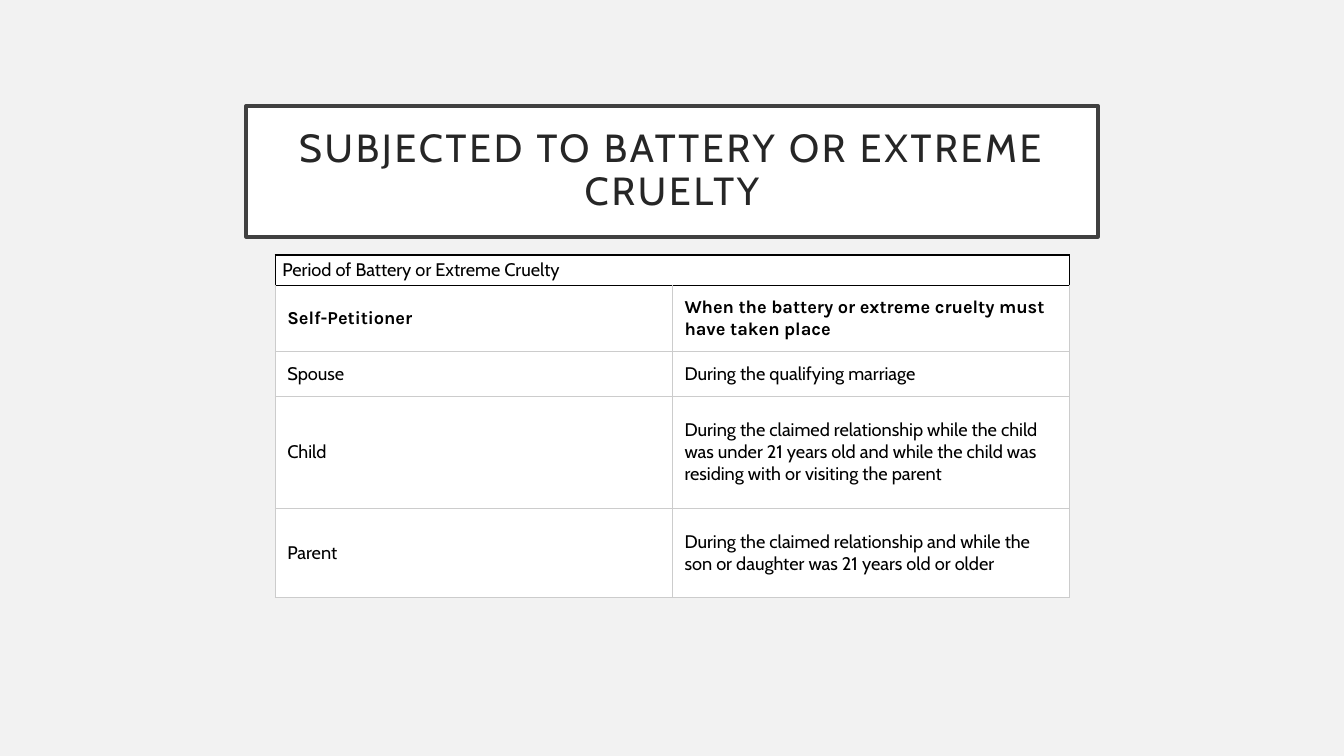
import pptx
import pptx.util
import pptx.dml.color
import pptx.enum.shapes
import pptx.enum.text
import pptx.oxml
import pptx.oxml.ns

RGB = pptx.dml.color.RGBColor
MID = pptx.enum.text.MSO_ANCHOR.MIDDLE
PAPER = RGB(0xF2, 0xF2, 0xF2)
WHITE = RGB(0xFF, 0xFF, 0xFF)
FRAME = RGB(0x40, 0x40, 0x40)
INK = RGB(0x26, 0x26, 0x26)
BLACK = RGB(0, 0, 0)
GRID = RGB(0xCC, 0xCC, 0xCC)

TITLE = "SUBJECTED TO BATTERY OR EXTREME CRUELTY"
ROWS = [
    (30, "Period of Battery or Extreme Cruelty", ""),
    (66, "Self-Petitioner",
     "When the battery or extreme cruelty must have taken place"),
    (44, "Spouse", "During the qualifying marriage"),
    (111, "Child",
     "During the claimed relationship while the child was under 21 years old "
     "and while the child was residing with or visiting the parent"),
    (89, "Parent",
     "During the claimed relationship and while the son or daughter was "
     "21 years old or older"),
]


def px(num):
    return pptx.util.Emu(num * 9144)


def inset(part, side, top):
    part.margin_left = part.margin_right = px(side)
    part.margin_top = part.margin_bottom = px(top)
    part.vertical_anchor = MID


def style(run, face, size, color, bold=False):
    run.font.name = face
    run.font.size = pptx.util.Pt(size)
    run.font.color.rgb = color
    run.font.bold = bold


def edge(cell, side, color, width):
    line = pptx.oxml.parse_xml(
        f'<a:ln{side} {pptx.oxml.ns.nsdecls("a")} w="{pptx.util.Pt(width)}">'
        f'<a:solidFill><a:srgbClr val="{color}"/></a:solidFill></a:ln{side}>')
    cell._tc.get_or_add_tcPr().append(line)


def banner(slide, left, top, width, height):
    box = slide.shapes.add_shape(
        pptx.enum.shapes.MSO_SHAPE.RECTANGLE,
        px(left), px(top), px(width), px(height))
    box.shadow.inherit = False
    box.fill.solid()
    box.fill.fore_color.rgb = WHITE
    box.line.color.rgb = FRAME
    box.line.width = pptx.util.Pt(2.5)
    frame = box.text_frame
    frame.word_wrap = True
    inset(frame, 20, 20)
    frame.text = TITLE
    para = frame.paragraphs[0]
    para.alignment = pptx.enum.text.PP_ALIGN.CENTER
    para.line_spacing = 0.9
    run = para.runs[0]
    style(run, "Cabin", 28, INK)
    run._r.get_or_add_rPr().set("spc", "200")


def periods(slide, left, top, width):
    height = sum(row[0] for row in ROWS)
    table = slide.shapes.add_table(
        len(ROWS), 2, px(left), px(top), px(width), px(height)).table
    table.first_row = table.horz_banding = False
    for col in table.columns:
        col.width = px(width // 2)
    table.cell(0, 0).merge(table.cell(0, 1))
    for i, (tall, *words) in enumerate(ROWS):
        table.rows[i].height = px(tall)
        for j, text in enumerate(words):
            cell = table.cell(i, j)
            inset(cell, 12 if i else 7, 11 if i else 4)
            for side in "LRTB":
                dark = i == 0 or (i == 1 and side == "T")
                edge(cell, side, BLACK if dark else GRID, 1 if dark else 0.75)
            cell.fill.solid()
            cell.fill.fore_color.rgb = WHITE
            if text:
                cell.text_frame.text = text
                style(cell.text_frame.paragraphs[0].runs[0],
                      "Karla" if i == 1 else "Cabin", 13, BLACK, i == 1)


def main():
    deck = pptx.Presentation()
    deck.slide_width, deck.slide_height = px(1333), px(750)
    slide = deck.slides.add_slide(deck.slide_layouts[6])
    slide.background.fill.solid()
    slide.background.fill.fore_color.rgb = PAPER
    banner(slide, 244, 105, 845, 130)
    periods(slide, 273, 253, 788)
    deck.save("out.pptx")


if __name__ == "__main__":
    main()
